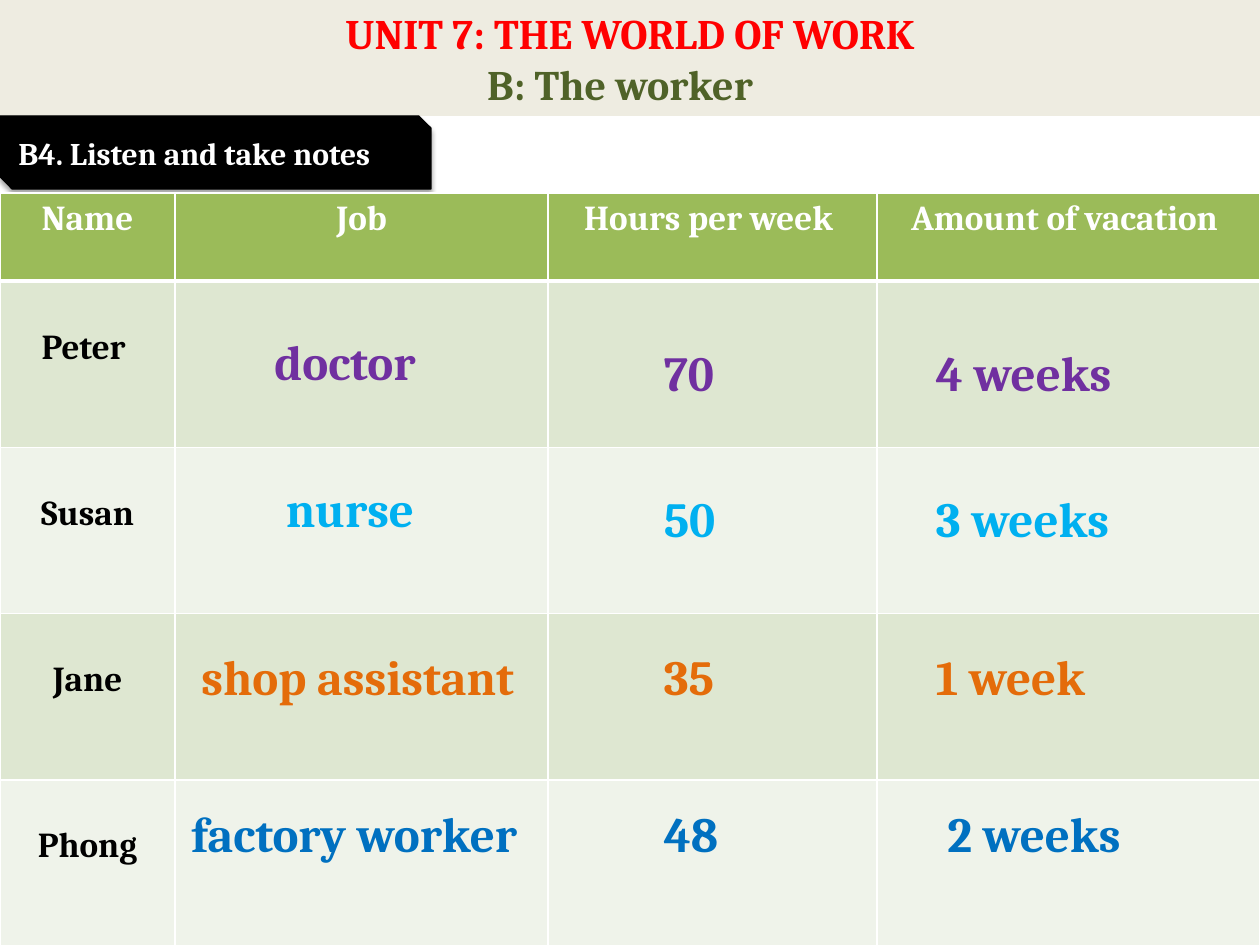
"""Build the "World of Work" listening slide with its note-taking table."""
from dataclasses import dataclass

from lxml import etree
from pptx import Presentation
from pptx.dml.color import RGBColor
from pptx.enum.shapes import MSO_SHAPE as Shape
from pptx.enum.text import MSO_ANCHOR as Anchor, MSO_AUTO_SIZE as AutoSize, PP_ALIGN as Align
from pptx.oxml.ns import qn
from pptx.util import Emu, Pt

PX = 9144
WHITE, BLACK = "FFFFFF", "000000"


@dataclass(frozen=True)
class Theme:
    font: str = "Cambria"
    title_size: int = 24
    task_size: int = 18
    table_size: int = 20
    answer_size: int = 28
    banner: str = "EEECE1"
    unit: str = "FF0000"
    section: str = "4F6228"
    header: str = "9BBB59"
    bands: tuple = ("DEE7D1", "EFF3EA")
    answers: tuple = ("7030A0", "00B0F0", "E46C0A", "0070C0")


def px(length):
    return Emu(length * PX)


class Board:
    def __init__(self, slide, theme):
        self.slide = slide
        self.theme = theme

    def add_text(self, paragraph, text, size, color, align=Align.LEFT):
        paragraph.alignment = align
        run = paragraph.add_run()
        run.text = text
        run.font.name = self.theme.font
        run.font.size = Pt(size)
        run.font.bold = True
        run.font.color.rgb = RGBColor.from_string(color)

    def panel(self, kind, box, fill):
        panel = self.slide.shapes.add_shape(kind, *map(px, box))
        panel.shadow.inherit = False
        panel.fill.solid()
        panel.fill.fore_color.rgb = RGBColor.from_string(fill)
        panel.line.fill.background()
        panel.text_frame.word_wrap = True
        panel.text_frame.vertical_anchor = Anchor.MIDDLE
        return panel

    def banner(self, box, unit, section):
        frame = self.panel(Shape.RECTANGLE, box, self.theme.banner).text_frame
        size = self.theme.title_size
        self.add_text(frame.paragraphs[0], unit, size, self.theme.unit, Align.CENTER)
        subtitle = frame.add_paragraph()
        self.add_text(subtitle, section, size, self.theme.section, Align.CENTER)
        subtitle._p.get_or_add_pPr().set("marR", str(px(16)))

    def task(self, box, text):
        tab = self.panel(Shape.SNIP_2_DIAG_RECTANGLE, box, BLACK)
        tab.line.color.rgb = RGBColor.from_string(BLACK)
        tab.line.width = Pt(0.75)
        effects = tab._element.spPr.find(qn("a:effectLst"))
        shadow = etree.SubElement(effects, qn("a:outerShdw"), blurRad=str(Pt(3.1)),
                                  dist=str(Pt(1.8)), dir="5400000", rotWithShape="0")
        tint = etree.SubElement(shadow, qn("a:srgbClr"), val=BLACK)
        etree.SubElement(tint, qn("a:alpha"), val="35000")
        self.add_text(tab.text_frame.paragraphs[0], text, self.theme.task_size, WHITE)

    def cell(self, cell, fill, top=1, bottom=1):
        cell.fill.solid()
        cell.fill.fore_color.rgb = RGBColor.from_string(fill)
        properties = cell._tc.get_or_add_tcPr()
        edges = (("L", 1), ("R", 1), ("T", top), ("B", bottom))
        for position, (side, width) in enumerate(edges):
            edge = etree.Element(qn(f"a:ln{side}"), w=str(Pt(width)))
            paint = etree.SubElement(edge, qn("a:solidFill"))
            etree.SubElement(paint, qn("a:srgbClr"), val=WHITE)
            properties.insert(position, edge)

    def table(self, box, widths, heights, headings, names):
        grid = self.slide.shapes.add_table(len(heights), len(widths), *map(px, box)).table
        for column, width in zip(grid.columns, widths):
            column.width = px(width)
        for row, height in zip(grid.rows, heights):
            row.height = px(height)
        size = self.theme.table_size
        for cell, heading in zip(grid.rows[0].cells, headings):
            self.cell(cell, self.theme.header, bottom=3)
            self.add_text(cell.text_frame.paragraphs[0], heading, size, WHITE, Align.CENTER)
        for index, name in enumerate(names):
            cells = list(grid.rows[index + 1].cells)
            for cell in cells:
                self.cell(cell, self.theme.bands[index % 2], top=1 if index else 3)
            cells[0].margin_top = px(37)
            self.add_text(cells[0].text_frame.paragraphs[0], name, size, BLACK, Align.CENTER)

    def answer(self, left, top, width, text, color):
        note = self.slide.shapes.add_textbox(*map(px, (left, top, width, 57)))
        note.text_frame.word_wrap = True
        note.text_frame.auto_size = AutoSize.SHAPE_TO_FIT_TEXT
        self.add_text(note.text_frame.paragraphs[0], text, self.theme.answer_size, color)


def main():
    deck = Presentation()
    deck.slide_width, deck.slide_height = px(1000), px(750)
    theme = Theme()
    board = Board(deck.slides.add_slide(deck.slide_layouts[6]), theme)

    board.banner((0, 0, 1000, 92), "UNIT 7: THE WORLD OF WORK", "B: The worker")
    board.task((0, 92, 342, 58), "B4. Listen and take notes")
    board.table((0, 153, 1000, 598), (139, 296, 261, 304), (70, 132, 132, 132, 132),
                ("Name", "Job", "Hours per week ", "Amount of vacation "),
                ("Peter ", "Susan", "Jane", "Phong"))

    jobs = (("doctor", 208, 258, 142), ("nurse", 217, 375, 142),
            ("shop assistant", 150, 508, 292), ("factory worker", 142, 633, 292))
    hours = ("70", "50", "35", "48")
    vacations = (("4 weeks", 733), ("3 weeks", 733), ("1 week", 733), ("2 weeks", 742))
    tops = (267, 383, 508, 633)
    for job, hour, vacation, top, color in zip(jobs, hours, vacations, tops, theme.answers):
        title, job_left, job_top, job_width = job
        length, vacation_left = vacation
        board.answer(job_left, job_top, job_width, title, color)
        board.answer(517, top, 83, hour, color)
        board.answer(vacation_left, top, 200, length, color)

    deck.save("out.pptx")


if __name__ == "__main__":
    main()
